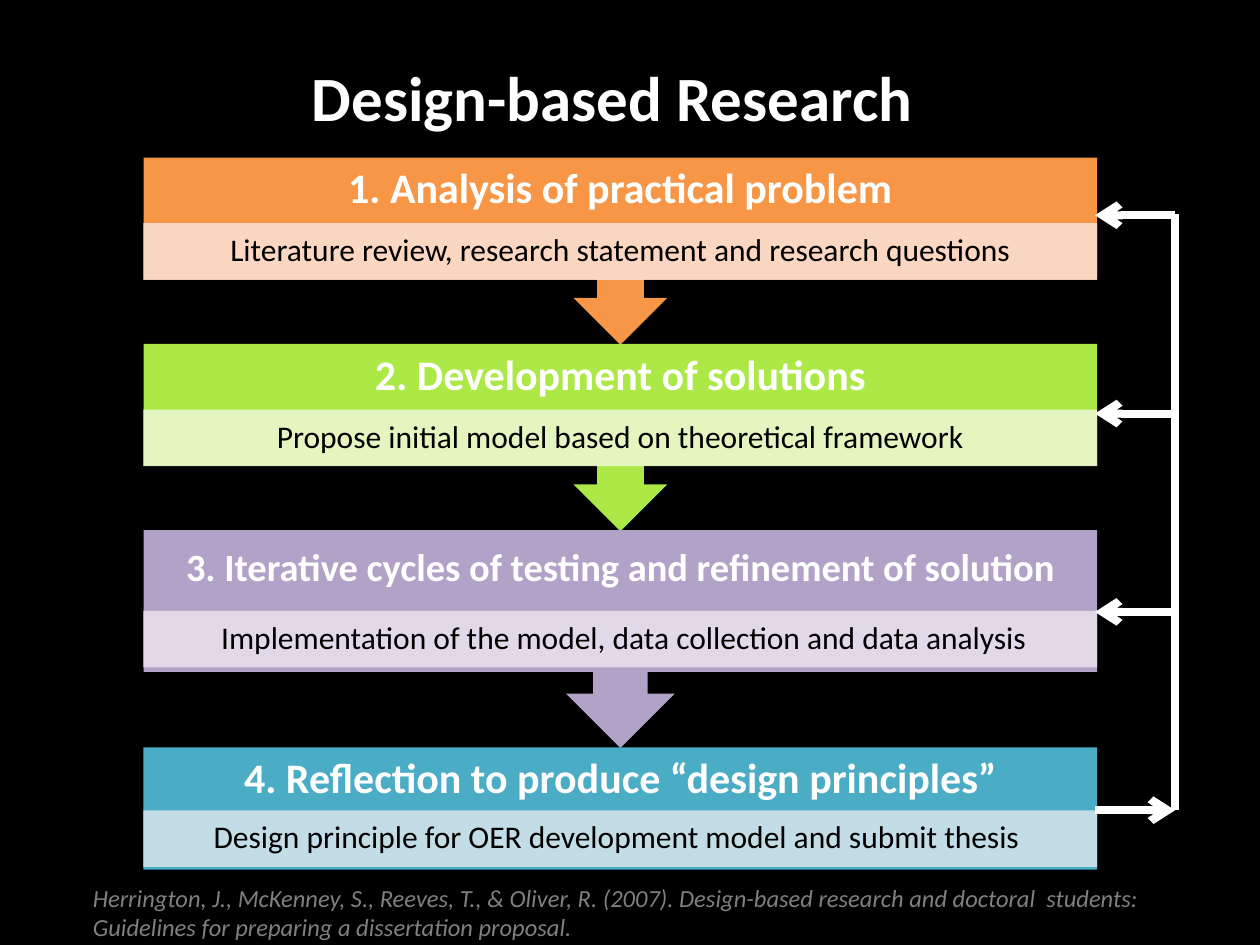
import pptx
import pptx.dml.color
import pptx.enum.shapes
import pptx.enum.text
import pptx.oxml
import pptx.oxml.ns
import pptx.util
from lxml import etree

Pt = pptx.util.Pt
SHAPE = pptx.enum.shapes.MSO_SHAPE
ALIGN = pptx.enum.text.PP_ALIGN
ANCHOR = pptx.enum.text.MSO_ANCHOR
qn = pptx.oxml.ns.qn

COLORS = {
    "background": "000000", "white": "FFFFFF", "black": "000000", "citation": "808080",
    "analysis": "F79646", "analysis_tint": "FCDDCF",
    "development": "ACE946", "development_tint": "EBF7CE",
    "testing": "B3A2C7", "testing_tint": "E6E0EC",
    "reflection": "4BACC6", "reflection_tint": "D0E3EA",
}
SHADOW = (
    '<a:effectLst xmlns:a="http://schemas.openxmlformats.org/drawingml/2006/main">'
    '<a:outerShdw blurRad="40000" dist="23000" dir="5400000" rotWithShape="0">'
    '<a:srgbClr val="000000"><a:alpha val="35000"/></a:srgbClr></a:outerShdw></a:effectLst>'
)
STAGES = [
    ("analysis", "1. Analysis of practical problem", 24,
     "Literature review, research statement and research questions", 90, 107, 37.5, 37.5),
    ("development", "2. Development of solutions", 24,
     "Propose initial model based on theoretical framework", 196.5, 107, 37.5, 37.5),
    ("testing", "3. Iterative cycles of testing and refinement of solution", 22,
     " Implementation of the model, data collection and data analysis", 303, 124.5, 44, 46),
    ("reflection", "4. Reflection to produce “design principles”", 24,
     "Design principle for OER development model and submit thesis ", 427, 70, 37.5, 36),
]
STAGE_LEFT, STAGE_WIDTH, DETAIL_HEIGHT = 82, 545, 32.4


def rgb(name):
    """Return the named colour."""
    return pptx.dml.color.RGBColor.from_string(COLORS[name])


def write(shape, text, size, color, bold=False, italic=False, align=ALIGN.CENTER,
          anchor=ANCHOR.MIDDLE, insets=(7.2, 3.6), spacing=None):
    """Fill a shape with one formatted paragraph."""
    frame = shape.text_frame
    frame.word_wrap = True
    frame.vertical_anchor = anchor
    frame.margin_left = frame.margin_right = Pt(insets[0])
    frame.margin_top = frame.margin_bottom = Pt(insets[1])
    paragraph = frame.paragraphs[0]
    paragraph.text = text
    paragraph.alignment = align
    paragraph.line_spacing = spacing
    font = paragraph.font
    font.name, font.size, font.bold, font.italic = "Calibri", Pt(size), bold, italic
    font.color.rgb = rgb(color)


def add_text(slide, box, *args, **kwargs):
    """Add a text box in the given box."""
    write(slide.shapes.add_textbox(*map(Pt, box)), *args, **kwargs)


def add_block(slide, kind, box, color):
    """Add a filled shape without outline or shadow."""
    block = slide.shapes.add_shape(kind, *map(Pt, box))
    block.shadow.inherit = False
    block.fill.solid()
    block.fill.fore_color.rgb = rgb(color)
    block.line.fill.background()
    return block


def add_stage(slide, box, color, heading, heading_size, detail, heading_height, detail_offset):
    """Draw one research stage with its heading, detail band and onward arrow."""
    left, top, width, height = box
    is_last = color == "reflection"
    body = add_block(slide, SHAPE.RECTANGLE if is_last else SHAPE.UP_ARROW_CALLOUT, box, color)
    body.rotation = 0 if is_last else 180
    properties = body._element.spPr
    properties.replace(properties.find(qn("a:effectLst")), pptx.oxml.parse_xml(SHADOW))
    inset = heading_size * 0.56
    add_text(slide, (left, top, width, heading_height), heading, heading_size, "white",
             bold=True, insets=(inset, inset), spacing=0.9)
    band = add_block(slide, SHAPE.RECTANGLE,
                     (left, top + detail_offset, width, DETAIL_HEIGHT), color + "_tint")
    tint = band._element.spPr.find(qn("a:solidFill"))[0]
    etree.SubElement(tint, qn("a:alpha")).set("val", "90000")
    write(band, detail, 18, "black", insets=(10, 2.3), spacing=0.9)


def add_line(slide, start, end, arrow=True):
    """Draw a thick white line, with an arrowhead at its end if wanted."""
    line = slide.shapes.add_connector(
        pptx.enum.shapes.MSO_CONNECTOR.STRAIGHT, *map(Pt, start + end))
    line.line.color.rgb = rgb("white")
    line.line.width = Pt(4.5)
    if arrow:
        etree.SubElement(line.line._get_or_add_ln(), qn("a:tailEnd")).set("type", "arrow")
    etree.SubElement(line._element.spPr, qn("a:effectLst"))


def add_feedback(slide, box):
    """Draw the loop from the last stage back to the three earlier ones."""
    left, top, width, height = box
    right, bottom = left + width, top + height
    add_line(slide, (left, bottom), (right, bottom))
    add_line(slide, (right, top - 0.5), (right, bottom), arrow=False)
    for step in range(3):
        level = top + step * height / 3
        add_line(slide, (right, level), (left, level))


def main():
    """Build and save the slide."""
    deck = pptx.Presentation()
    deck.slide_width, deck.slide_height = Pt(720), Pt(540)
    slide = deck.slides.add_slide(deck.slide_layouts[6])
    slide.background.fill.solid()
    slide.background.fill.fore_color.rgb = rgb("background")
    add_text(slide, (30, 10, 648, 90), "Design-based Research ", 36, "white", bold=True)
    for color, heading, size, detail, top, height, heading_height, offset in STAGES:
        add_stage(slide, (STAGE_LEFT, top, STAGE_WIDTH, height), color, heading, size,
                  detail, heading_height, offset)
    add_feedback(slide, (625.7, 123, 45.8, 340))
    add_text(slide, (46, 501, 626, 41),
             "Herrington, J., McKenney, S., Reeves, T., & Oliver, R. (2007). Design-based "
             "research and doctoral  students: Guidelines for preparing a dissertation proposal.",
             14, "citation", italic=True, align=ALIGN.LEFT, anchor=ANCHOR.TOP)
    deck.save("out.pptx")


if __name__ == "__main__":
    main()
